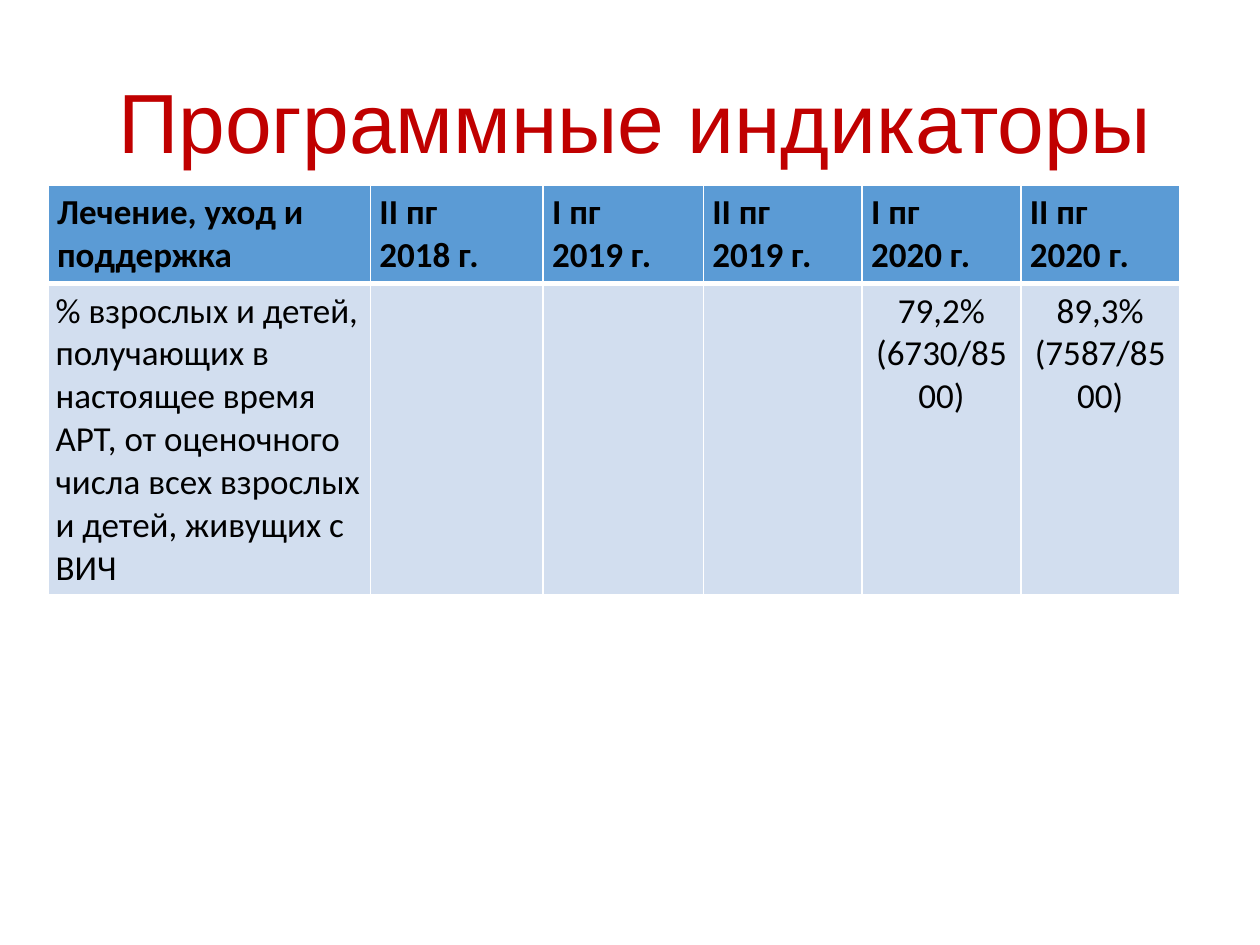
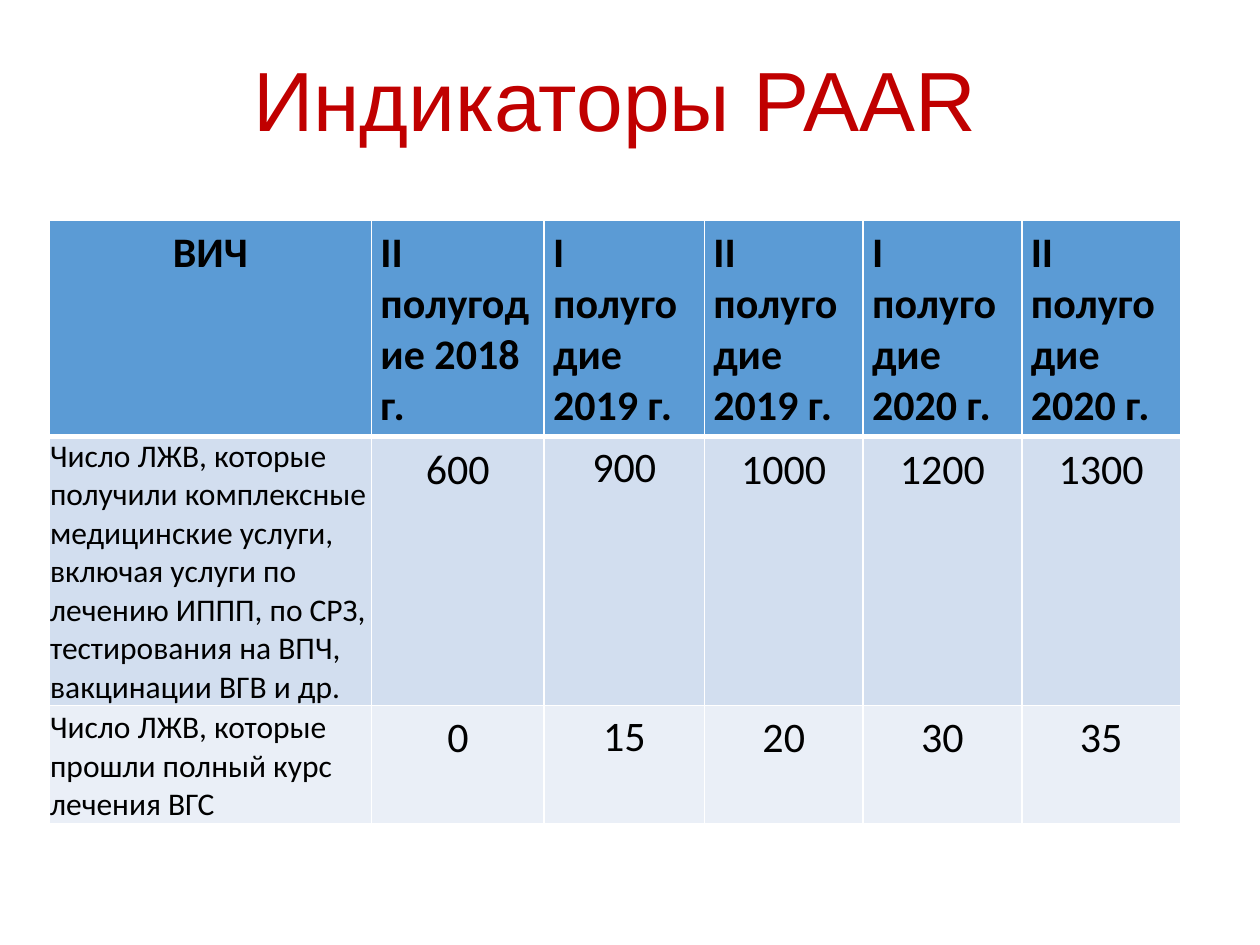
"""Build two slides with tables of HIV programme indicators."""
import dataclasses

import pptx
import pptx.dml.color
import pptx.enum.text
import pptx.oxml
import pptx.oxml.ns
import pptx.util

Cm = pptx.util.Cm
Pt = pptx.util.Pt
ALIGN = pptx.enum.text.PP_ALIGN
ANCHOR = pptx.enum.text.MSO_ANCHOR

RED, BLACK, WHITE = "C00000", "000000", "FFFFFF"
HEADER_FILL = "5B9BD5"
BAND_FILLS = ("D2DEEF", "EAEFF7")
COLUMN_WIDTHS = (6.5, 3.48, 3.23, 3.2, 3.2, 3.2)


@dataclasses.dataclass(frozen=True)
class CellStyle:
    """Text layout of a table cell, with margins in centimetres."""
    size: int
    align: ALIGN = ALIGN.LEFT
    bold: bool = False
    side: float = 0.18
    top: float = 0.13
    bottom: float = 0.13
    spacing: float = 1.0
    anchor: ANCHOR = ANCHOR.TOP


def rgb(color):
    """Turn a hex string into a colour."""
    return pptx.dml.color.RGBColor.from_string(color)


def style_paragraph(p, font, size, color, align, spacing, bold=False):
    """Set the font and layout of a paragraph."""
    p.font.name = font
    p.font.size = Pt(size)
    p.font.bold = bold
    p.font.color.rgb = rgb(color)
    p.alignment = align
    p.line_spacing = spacing


def add_title(slide, text, left, top, height):
    """Add a large red title that rests on the bottom of its box."""
    sp = slide.shapes.add_textbox(Cm(left), Cm(top), Cm(23.67), Cm(height))
    tf = sp.text_frame
    tf.word_wrap = True
    tf.vertical_anchor = ANCHOR.BOTTOM
    tf.text = text
    style_paragraph(tf.paragraphs[0], "Arial", 48, RED, ALIGN.CENTER, 0.9)


def set_borders(cell, top, bottom):
    """Draw white cell borders, with top and bottom widths in points."""
    tc_pr = cell._tc.get_or_add_tcPr()
    sides = (("L", 1), ("R", 1), ("T", top), ("B", bottom))
    for i, (side, width) in enumerate(sides):
        ln = pptx.oxml.parse_xml(
            f'<a:ln{side} {pptx.oxml.ns.nsdecls("a")} w="{Pt(width)}">'
            f'<a:solidFill><a:srgbClr val="{WHITE}"/></a:solidFill></a:ln{side}>')
        tc_pr.insert(i, ln)


def fill_cell(cell, text, style, fill):
    """Write a cell's text and set its layout and fill."""
    cell.fill.solid()
    cell.fill.fore_color.rgb = rgb(fill)
    cell.margin_left = cell.margin_right = Cm(style.side)
    cell.margin_top, cell.margin_bottom = Cm(style.top), Cm(style.bottom)
    cell.vertical_anchor = style.anchor
    cell.text = text
    for p in cell.text_frame.paragraphs:
        style_paragraph(p, "Calibri", style.size, BLACK, style.align,
                        style.spacing, style.bold)


def add_indicator_table(slide, left, top, heights, rows, header_styles, body_styles):
    """Add a table with a blue header row and banded body rows."""
    table = slide.shapes.add_table(
        len(rows), len(COLUMN_WIDTHS), Cm(left), Cm(top),
        Cm(sum(COLUMN_WIDTHS)), Cm(sum(heights))).table
    for column, width in zip(table.columns, COLUMN_WIDTHS):
        column.width = Cm(width)
    for i, (texts, height) in enumerate(zip(rows, heights)):
        table.rows[i].height = Cm(height)
        fill = BAND_FILLS[(i - 1) % 2] if i else HEADER_FILL
        styles = body_styles if i else header_styles
        for j, (text, style) in enumerate(zip(texts, styles)):
            cell = table.cell(i, j)
            fill_cell(cell, text, style, fill)
            set_borders(cell, 3 if i == 1 else 1, 1 if i else 3)


def add_programme_slide(prs):
    """Add the slide on treatment, care and support."""
    slide = prs.slides.add_slide(prs.slide_layouts[6])
    add_title(slide, "Программные индикаторы", 0.97, 1.17, 2.41)
    rows = [
        ("Лечение, уход и поддержка", "II пг\n2018 г.", "I пг\n2019 г.",
         "II пг\n2019 г.", "I пг\n2020 г.", "II пг\n2020 г."),
        ("% взрослых и детей, получающих в настоящее время АРТ, от оценочного "
         "числа всех взрослых и детей, живущих с ВИЧ",
         "", "", "", "79,2%\n(6730/8500)", "89,3%\n(7587/8500)"),
    ]
    header = CellStyle(20, bold=True)
    label = CellStyle(20, side=0.15)
    value = CellStyle(20, ALIGN.CENTER)
    add_indicator_table(slide, 0.97, 3.73, (1.98, 6.28), rows,
                        [header] * 6, [label] + [value] * 5)


def add_paar_slide(prs):
    """Add the slide on the PAAR indicators."""
    slide = prs.slides.add_slide(prs.slide_layouts[6])
    add_title(slide, "Индикаторы PAAR", 0.56, 0.56, 2.59)
    rows = [
        ("ВИЧ", "II полугодие 2018 г.", "I полугодие 2019 г.",
         "II полугодие 2019 г.", "I полугодие 2020 г.", "II полугодие 2020 г."),
        ("Число ЛЖВ, которые получили комплексные медицинские услуги, включая "
         "услуги по лечению ИППП, по СРЗ, тестирования на ВПЧ, вакцинации ВГВ и др.",
         "600", "900", "1000", "1200", "1300"),
        ("Число ЛЖВ, которые прошли полный курс лечения ВГС",
         "0", "15", "20", "30", "35"),
    ]
    corner = CellStyle(24, ALIGN.CENTER, bold=True)
    header = CellStyle(24, bold=True)
    label = CellStyle(18, side=0.02, top=0.02, bottom=0, anchor=ANCHOR.BOTTOM)
    value = CellStyle(24, ALIGN.CENTER, side=0.13, top=0, bottom=0, spacing=1.15)
    padded = CellStyle(24, ALIGN.CENTER)
    add_indicator_table(slide, 0.99, 4.45, (4.35, 5.42, 2.39), rows,
                        [corner] + [header] * 5,
                        [label, value, padded, value, value, value])


def main():
    """Build and save the presentation."""
    prs = pptx.Presentation()
    prs.slide_width, prs.slide_height = Cm(25.4), Cm(19.05)
    add_programme_slide(prs)
    add_paar_slide(prs)
    prs.save("out.pptx")


if __name__ == "__main__":
    main()
